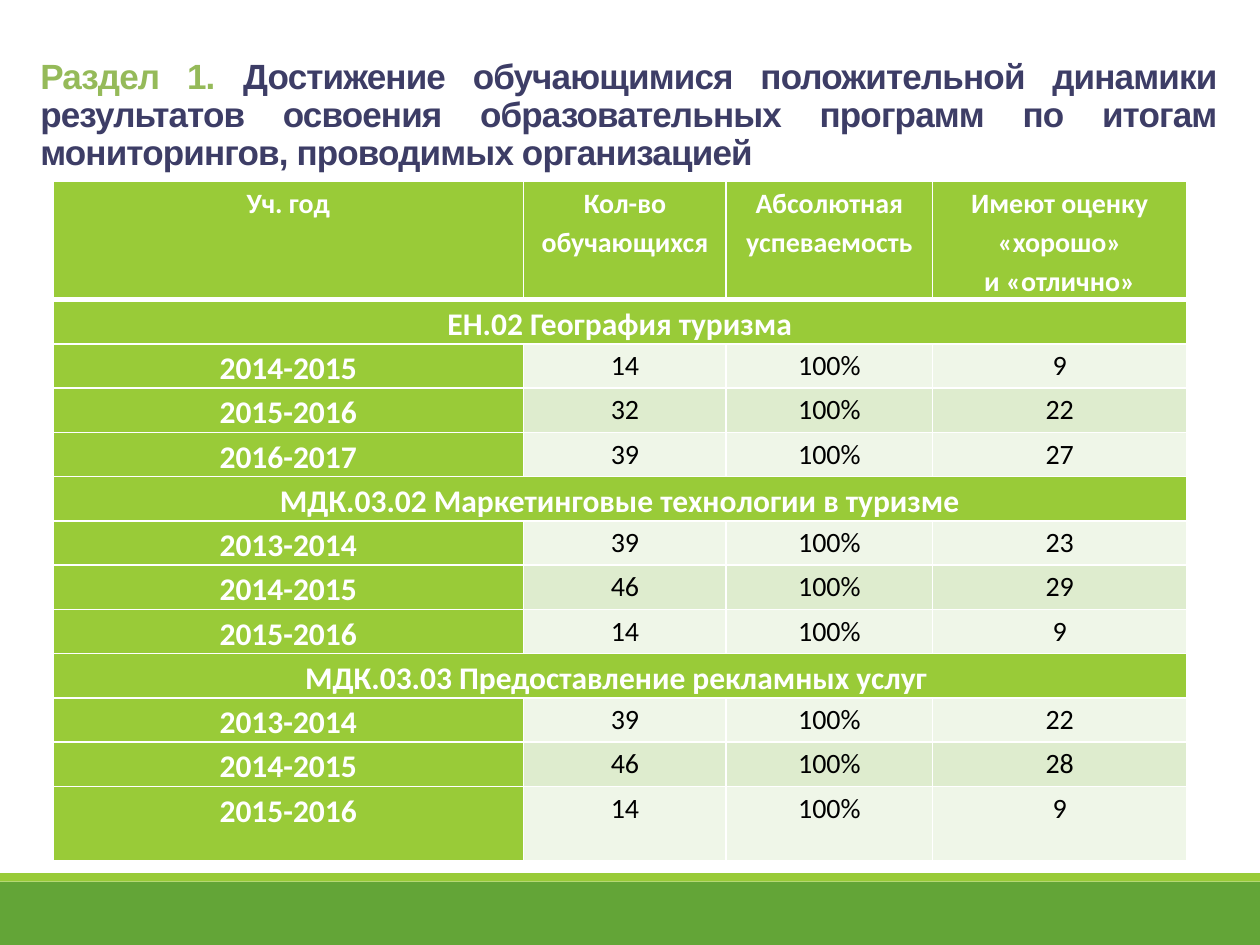
from pptx import Presentation, util as u
from pptx.dml import color
from pptx.enum import shapes, text
from pptx.oxml import parse_xml
from pptx.oxml.ns import nsdecls

THEME = {
    "lime": "99CB38", "green": "63A537", "white": "FFFFFF", "black": "000000",
    "accent": "95BA59", "navy": "3D3D66", "bands": ("EFF6E8", "DEECCE"),
    "title_font": "Arial", "table_font": "Calibri",
    "title_size": 20, "group_size": 18, "cell_size": 16,
}
TITLE = (
    ("Раздел 1. ", "accent"),
    ("Достижение обучающимися положительной динамики результатов освоения "
     "образовательных программ по итогам мониторингов, проводимых организацией", "navy"),
)
HEADINGS = ("Уч. год", "Кол-во обучающихся", "Абсолютная успеваемость",
            "Имеют оценку\n«хорошо»\nи «отлично»")
GROUPS = {
    "ЕН.02 География туризма": (
        ("2014-2015", 14, 9), ("2015-2016", 32, 22), ("2016-2017", 39, 27)),
    "МДК.03.02 Маркетинговые технологии в туризме": (
        ("2013-2014", 39, 23), ("2014-2015", 46, 29), ("2015-2016", 14, 9)),
    "МДК.03.03 Предоставление рекламных услуг ": (
        ("2013-2014", 39, 22), ("2014-2015", 46, 28), ("2015-2016", 14, 9)),
}
COLUMNS = (3.74, 1.61, 1.64, 2.02)
HEADER_HEIGHT, ROW_HEIGHT, LAST_HEIGHT = 0.88, 0.33, 0.57


def apply(target, **values):
    """Set every given attribute on the target."""
    for name, value in values.items():
        setattr(target, name, value)


def rgb(name):
    """Return a theme colour by its name, or a plain hex colour."""
    return color.RGBColor.from_string(THEME.get(name, name))


def style_font(font, family, size, tone, bold=True):
    """Give a font its family, size, weight and colour."""
    apply(font, name=THEME[family], size=u.Pt(THEME[size]), bold=bold)
    font.color.rgb = rgb(tone)


def add_footer(slide, left, top, width, height):
    """Draw the green footer with its thin lime strip on top."""
    strip = round(height * 0.12)
    for tone, offset, thickness in (("green", strip, height - strip), ("lime", 0, strip)):
        band = slide.shapes.add_shape(
            shapes.MSO_SHAPE.RECTANGLE, left, top + offset, width, thickness)
        band.shadow.inherit = False
        band.fill.solid()
        band.fill.fore_color.rgb = rgb(tone)
        band.line.fill.background()


def fill_title(slide, left, top, width, height):
    """Place the title and write its two-coloured sentence."""
    title = slide.shapes.title
    apply(title, left=left, top=top, width=width, height=height)
    apply(title.text_frame, word_wrap=True, auto_size=text.MSO_AUTO_SIZE.NONE,
          vertical_anchor=text.MSO_ANCHOR.TOP)
    paragraph = title.text_frame.paragraphs[0]
    apply(paragraph, alignment=text.PP_ALIGN.JUSTIFY, line_spacing=0.9)
    for words, tone in TITLE:
        run = paragraph.add_run()
        run.text = words
        style_font(run.font, "title_font", "title_size", tone)
        run.font._element.set("spc", "-50")


def add_borders(cell, top, bottom):
    """Draw white cell borders with the given top and bottom widths."""
    properties = cell._tc.get_or_add_tcPr()
    for side, points in (("L", 1), ("R", 1), ("T", top), ("B", bottom)):
        properties.append(parse_xml(
            f'<a:ln{side} {nsdecls("a")} w="{u.Pt(points)}"><a:solidFill>'
            f'<a:srgbClr val="{THEME["white"]}"/></a:solidFill></a:ln{side}>'))


def write_cell(cell, words, fill, size="cell_size", tone="white", bold=True, top=1, bottom=1):
    """Write one centred cell with its fill and borders."""
    add_borders(cell, top, bottom)
    cell.fill.solid()
    cell.fill.fore_color.rgb = rgb(fill)
    margin = u.Inches(0.07)
    apply(cell, text=str(words), margin_left=margin, margin_right=margin,
          margin_top=0, margin_bottom=0)
    for paragraph in cell.text_frame.paragraphs:
        apply(paragraph, alignment=text.PP_ALIGN.CENTER, line_spacing=1.15)
        for run in paragraph.runs:
            style_font(run.font, "table_font", size, tone, bold)


def add_results(slide, left, top, width, height):
    """Build the table of yearly results grouped by course."""
    row_count = 1 + sum(1 + len(years) for years in GROUPS.values())
    table = slide.shapes.add_table(row_count, len(COLUMNS), left, top, width, height).table
    for column, share in zip(table.columns, COLUMNS):
        column.width = round(width * share / sum(COLUMNS))
    heights = [HEADER_HEIGHT] + [ROW_HEIGHT] * (row_count - 2) + [LAST_HEIGHT]
    for row, share in zip(table.rows, heights):
        row.height = round(height * share / sum(heights))
    for index, heading in enumerate(HEADINGS):
        write_cell(table.cell(0, index), heading, "lime", bottom=3)
    row = 1
    for course, years in GROUPS.items():
        edge = 3 if row == 1 else 1
        for index in range(len(COLUMNS)):
            write_cell(table.cell(row, index), "" if index else course, "lime",
                       "group_size", top=edge)
        table.cell(row, 0).merge(table.cell(row, len(COLUMNS) - 1))
        for offset, (year, students, good) in enumerate(years):
            row += 1
            write_cell(table.cell(row, 0), year, "lime", "group_size")
            band = THEME["bands"][offset % 2]
            for index, value in enumerate((students, "100%", good), 1):
                write_cell(table.cell(row, index), value, band, tone="black", bold=False)
        row += 1


def main():
    """Create the presentation and save it."""
    presentation = Presentation()
    apply(presentation, slide_width=u.Inches(10), slide_height=u.Inches(7.5))
    slide = presentation.slides.add_slide(presentation.slide_layouts[5])
    regions = (
        (add_footer, (0, 0.924, 1, 0.076)),
        (fill_title, (0.022, 0.056, 0.953, 0.144)),
        (add_results, (0.042, 0.192, 0.9, 0.704)),
    )
    sides = (presentation.slide_width, presentation.slide_height) * 2
    for build, shares in regions:
        build(slide, *(round(side * share) for side, share in zip(sides, shares)))
    presentation.save("out.pptx")


if __name__ == "__main__":
    main()
